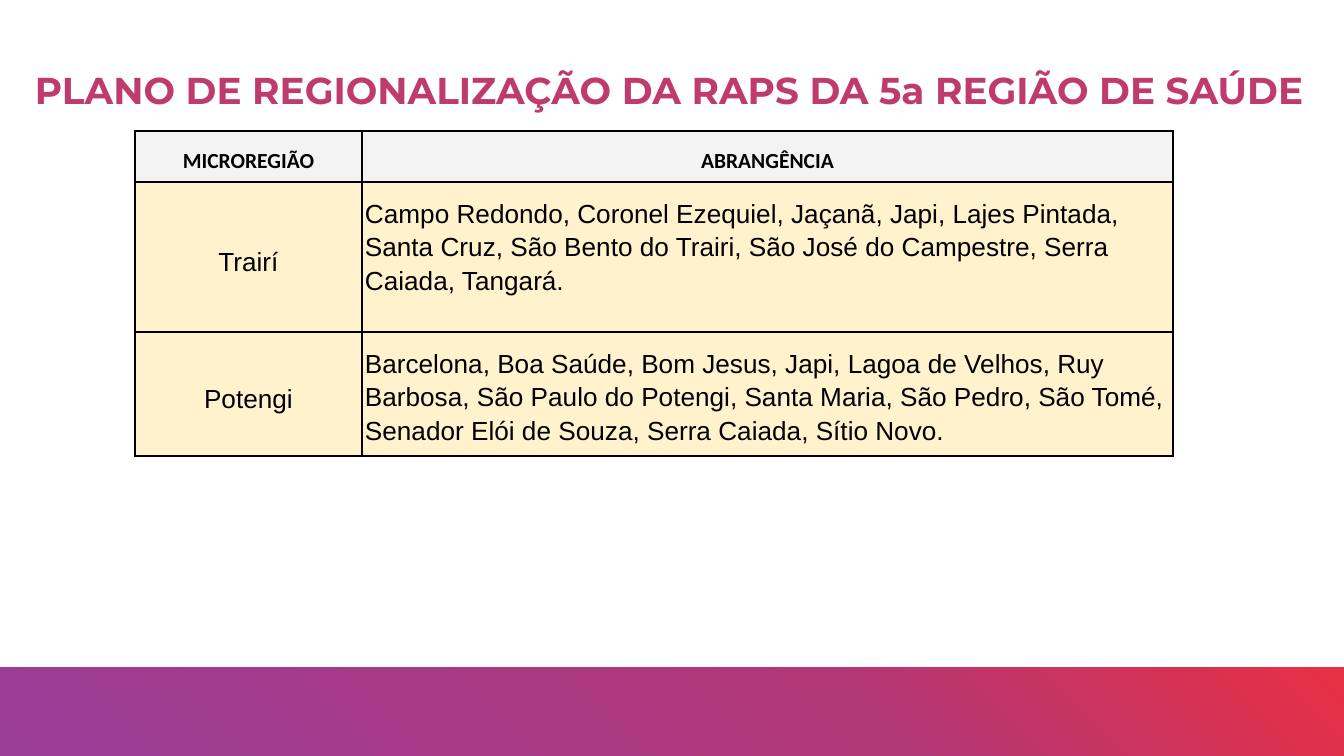
import copy

import pptx
import pptx.dml.color
import pptx.enum.shapes
import pptx.enum.text
import pptx.oxml
import pptx.oxml.ns
import pptx.util

EMU_PER_PX = 914400 / 134.4
COLOURS = {
    "title": "BF3B6D",
    "text": "000000",
    "header": "F3F3F3",
    "body": "FFF2CC",
    "purple": "993D98",
    "magenta": "B23776",
    "red": "E83043",
}
ALIGN = pptx.enum.text.PP_ALIGN
ANCHOR = pptx.enum.text.MSO_ANCHOR


def px(length):
    return pptx.util.Emu(round(length * EMU_PER_PX))


def rgb(name):
    return pptx.dml.color.RGBColor.from_string(COLOURS[name])


class SlideBuilder:
    def __init__(self, presentation):
        layout = presentation.slide_layouts.get_by_name("Title Only")
        self.slide = presentation.slides.add_slide(layout)

    def add_text(self, paragraph, text, font, size, colour="text", bold=False,
                 align=ALIGN.LEFT, spacing=None):
        paragraph.alignment = align
        if spacing:
            paragraph.line_spacing = spacing
        run = paragraph.add_run()
        run.text = text
        run.font.name = font
        run.font.size = pptx.util.Pt(size)
        run.font.bold = bold
        run.font.color.rgb = rgb(colour)

    def title(self, text, left, top, width, height):
        title = self.slide.shapes.title
        title.left, title.top = px(left), px(top)
        title.width, title.height = px(width), px(height)
        frame = title.text_frame
        frame.margin_left = frame.margin_right = 0
        frame.margin_top = frame.margin_bottom = 0
        frame.vertical_anchor = ANCHOR.TOP
        frame.word_wrap = True
        frame.auto_size = pptx.enum.text.MSO_AUTO_SIZE.SHAPE_TO_FIT_TEXT
        self.add_text(frame.paragraphs[0], text, "Montserrat", 20, "title",
                      bold=True, spacing=1.75)

    def gradient_band(self, left, top, width, height, stops, angle):
        band = self.slide.shapes.add_shape(
            pptx.enum.shapes.MSO_SHAPE.RECTANGLE,
            px(left), px(top), px(width), px(height))
        band.shadow.inherit = False
        band.line.fill.background()
        band.fill.gradient()
        band.fill.gradient_angle = angle
        # A new gradient has two stops, so repeat the first for the rest
        stop_list = band._element.spPr.find(".//" + pptx.oxml.ns.qn("a:gsLst"))
        for _ in range(len(stops) - 2):
            stop_list.insert(0, copy.deepcopy(stop_list[0]))
        for stop, (position, colour) in zip(band.fill.gradient_stops, stops):
            stop.position = position
            stop.color.rgb = rgb(colour)

    def table(self, left, top, columns, rows):
        frame = self.slide.shapes.add_table(
            len(rows), len(columns), px(left), px(top),
            px(sum(columns)), px(sum(rows)))
        table = frame.table
        for column, width in zip(table.columns, columns):
            column.width = px(width)
        for row, height in zip(table.rows, rows):
            row.height = px(height)
        return table

    def cell(self, cell, text, fill, anchor=ANCHOR.TOP, **style):
        cell.margin_left = cell.margin_right = cell.margin_bottom = px(3)
        cell.margin_top = px(13)
        cell.vertical_anchor = anchor
        self.borders(cell)
        cell.fill.solid()
        cell.fill.fore_color.rgb = rgb(fill)
        self.add_text(cell.text_frame.paragraphs[0], text, **style)

    def borders(self, cell):
        properties = cell._tc.get_or_add_tcPr()
        for side in ("lnL", "lnR", "lnT", "lnB"):
            properties.append(pptx.oxml.parse_xml(
                f'<a:{side} {pptx.oxml.ns.nsdecls("a")} w="{pptx.util.Pt(0.75)}">'
                f'<a:solidFill><a:srgbClr val="{COLOURS["text"]}"/></a:solidFill>'
                f'</a:{side}>'))


def main():
    presentation = pptx.Presentation()
    presentation.slide_width, presentation.slide_height = px(1344), px(756)
    builder = SlideBuilder(presentation)

    # Footer band
    builder.gradient_band(-1, 668, 1345, 88,
                          [(0, "purple"), (0.64, "magenta"), (1, "red")], 45)

    # Title
    builder.title("PLANO DE REGIONALIZAÇÃO DA RAPS DA 5a REGIÃO DE SAÚDE",
                  35, 34, 1273, 46)

    # Micro-regions and the towns they cover
    headings = ("MICROREGIÃO", "ABRANGÊNCIA")
    regions = [
        ("Trairí",
         "Campo Redondo, Coronel Ezequiel, Jaçanã, Japi, Lajes Pintada, "
         "Santa Cruz, São Bento do Trairi, São José do Campestre, "
         "Serra Caiada, Tangará."),
        ("Potengi",
         "Barcelona, Boa Saúde, Bom Jesus, Japi, Lagoa de Velhos, "
         "Ruy Barbosa, São Paulo do Potengi, Santa Maria, São Pedro, "
         "São Tomé, Senador Elói de Souza, Serra Caiada, Sítio Novo."),
    ]
    coverage = builder.table(135, 131, (227, 811), (51, 150, 121))
    for column, heading in enumerate(headings):
        builder.cell(coverage.cell(0, column), heading, "header",
                     font="Calibri", size=11.5, bold=True,
                     align=ALIGN.CENTER, spacing=1.15)
    for row, (region, towns) in enumerate(regions, start=1):
        builder.cell(coverage.cell(row, 0), region, "body", ANCHOR.MIDDLE,
                     font="Arial", size=14, align=ALIGN.CENTER)
        builder.cell(coverage.cell(row, 1), towns, "body",
                     font="Arial", size=14, spacing=1.15)

    presentation.save("out.pptx")


if __name__ == "__main__":
    main()
